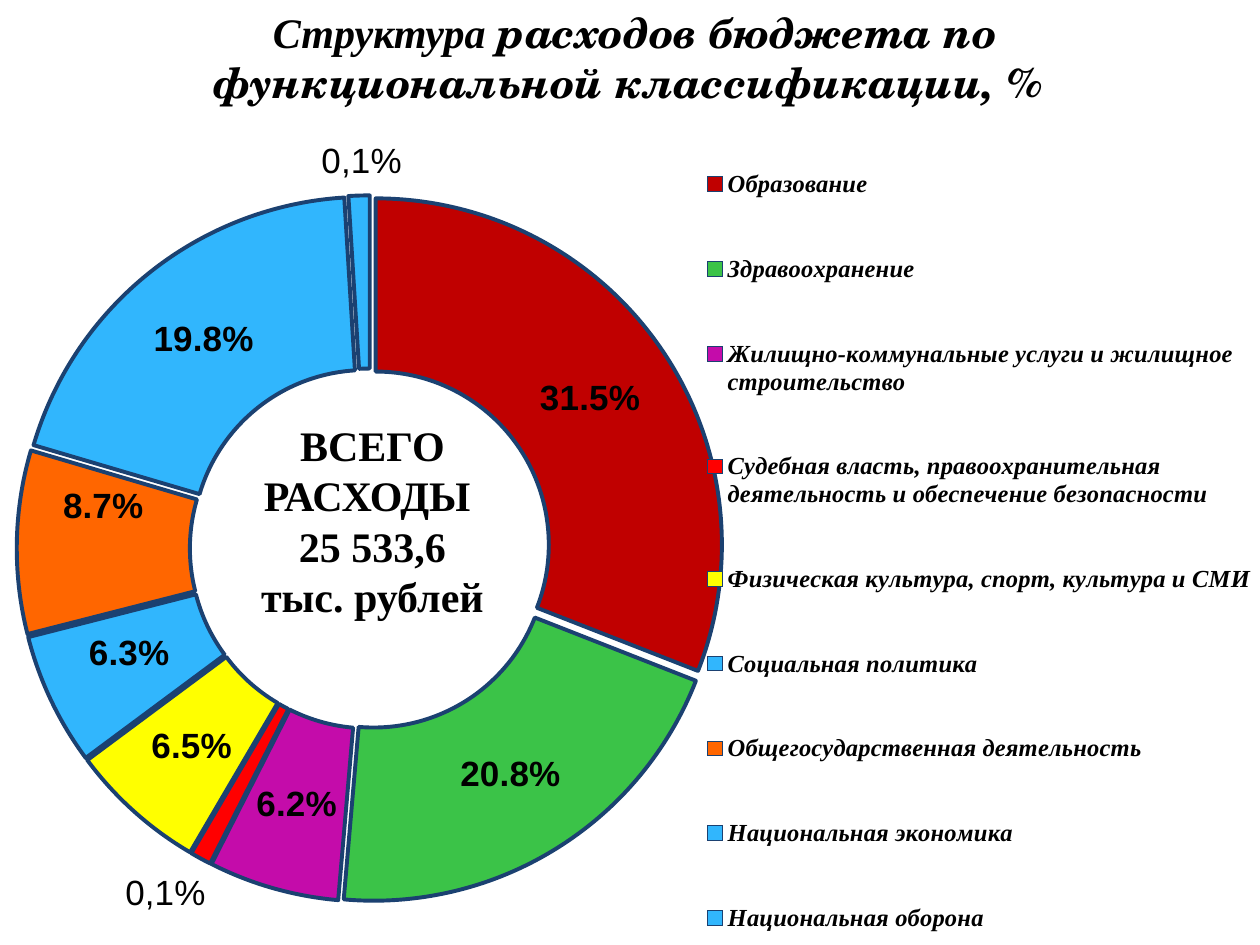
"""Build a slide with a doughnut chart of budget spending by function."""
import pptx
import pptx.chart.data
import pptx.dml.color
import pptx.enum.chart
import pptx.enum.text
import pptx.oxml
import pptx.oxml.ns
import pptx.util

Pt = pptx.util.Pt
SERIF = "Times New Roman"
OUTLINE = "1B4171"
PERCENT = "0.0%"

SPENDING = [
    ("Образование", 0.315, "C00000"),
    ("Здравоохранение", 0.208, "3BC348"),
    ("Жилищно-коммунальные услуги и жилищное строительство", 0.062, "C40CAA"),
    ("Судебная власть, правоохранительная деятельность и обеспечение безопасности", 0.01, "FF0000"),
    ("Физическая культура, спорт, культура и СМИ", 0.065, "FFFF00"),
    ("Социальная политика", 0.063, "31B6FD"),
    ("Общегосударственная деятельность", 0.087, "FF6600"),
    ("Национальная экономика", 0.198, "31B6FD"),
    ("Национальная оборона", 0.01, "31B6FD"),
]
MOVED_LABELS = {
    3: ("0,1%", -0.06, 0.12),
    5: (None, 0, -0.01),
    6: (None, 0, -0.04),
    8: ("0,1%", 0, -0.13),
}
TITLE = [[("Структура", SERIF), (" расходов бюджета по функциональной классификации, % ", "TeX Gyre Schola")]]
TOTAL = [[(line, SERIF)] for line in ("ВСЕГО РАСХОДЫ ", "25 533,6", "тыс. рублей")]


def color(value):
    return pptx.dml.color.RGBColor.from_string(value)


def style(font, name, size, bold=False, italic=False):
    font.name, font.size, font.bold, font.italic = name, Pt(size), bold, italic
    font.color.rgb = color("000000")


def add_text(slide, paragraphs, box, size=24, bold=True, italic=False):
    frame = slide.shapes.add_textbox(*map(Pt, box)).text_frame
    frame.word_wrap = True
    for index, runs in enumerate(paragraphs):
        paragraph = frame.add_paragraph() if index else frame.paragraphs[0]
        paragraph.alignment = pptx.enum.text.PP_ALIGN.CENTER
        for words, name in runs:
            run = paragraph.add_run()
            run.text = words
            style(run.font, name, size, bold, italic)


def chart_xml(tag, content="", **attributes):
    values = "".join(f' {key}="{value}"' for key, value in attributes.items())
    return pptx.oxml.parse_xml(
        f'<c:{tag} {pptx.oxml.ns.nsdecls("c")}{values}>{content}</c:{tag}>')


def place(parent, position, **layout):
    for old in parent.findall(pptx.oxml.ns.qn("c:layout")):
        parent.remove(old)
    settings = "".join(f'<c:{key} val="{value}"/>' for key, value in layout.items())
    parent.insert(position, chart_xml("layout", f"<c:manualLayout>{settings}</c:manualLayout>"))


def add_spending_chart(slide):
    data = pptx.chart.data.CategoryChartData(number_format=PERCENT)
    data.categories = [category for category, _, _ in SPENDING]
    data.add_series("Series 1", [share for _, share, _ in SPENDING])
    chart = slide.shapes.add_chart(
        pptx.enum.chart.XL_CHART_TYPE.DOUGHNUT_EXPLODED,
        Pt(-8.64), Pt(48.96), Pt(728.64), Pt(527.04), data).chart
    chart.has_title = False
    style(chart.font, "Calibri", 18)

    chart.has_legend = True
    legend = chart.legend
    legend.position = pptx.enum.chart.XL_LEGEND_POSITION.BOTTOM
    legend.include_in_layout = False
    style(legend.font, SERIF, 14, bold=True, italic=True)
    edges = dict(xMode="edge", yMode="edge")
    place(legend._element, 1, **edges, x=0.56, y=0.03, w=0.44, h=0.95)
    plot_area = chart._chartSpace.chart.plotArea
    place(plot_area, 0, layoutTarget="inner", **edges, x=0.025, y=0.089, w=0.554, h=0.826)

    plot = chart.plots[0]
    plot.vary_by_categories = True
    plot.has_data_labels = False
    ring = plot.series[0]
    ring._element.find(pptx.oxml.ns.qn("c:explosion")).set("val", "4")
    for index, (_, _, fill) in enumerate(SPENDING):
        sector = ring.points[index].format
        sector.fill.solid()
        sector.fill.fore_color.rgb = color(fill)
        sector.line.color.rgb = color(OUTLINE)
        sector.line.width = Pt(2.25)

    labels = ring.data_labels
    labels.show_value = True
    labels.number_format, labels.number_format_is_linked = PERCENT, False
    style(labels.font, "Arial", 20, bold=True)
    for index, (words, x, y) in MOVED_LABELS.items():
        label = ring.points[index].data_label
        if words:
            run = label.text_frame.paragraphs[0].add_run()
            run.text = words
            style(run.font, "Arial", 20)
        else:
            style(label.font, "Arial", 20, bold=True)
        node = ring._element.xpath(f"c:dLbls/c:dLbl[c:idx/@val='{index}']")[0]
        place(node, 1, x=x, y=y)
        if not words:
            node.insert(2, chart_xml("numFmt", formatCode=PERCENT, sourceLinked=0))


def main():
    deck = pptx.Presentation()
    deck.slide_width, deck.slide_height = Pt(720), Pt(540)
    slide = deck.slides.add_slide(deck.slide_layouts[6])
    add_spending_chart(slide)
    add_text(slide, TITLE, (82, 0, 561.6, 65.5), italic=True)
    add_text(slide, TOTAL, (110.9, 236.2, 203.8, 123.8))
    deck.save("out.pptx")


if __name__ == "__main__":
    main()
